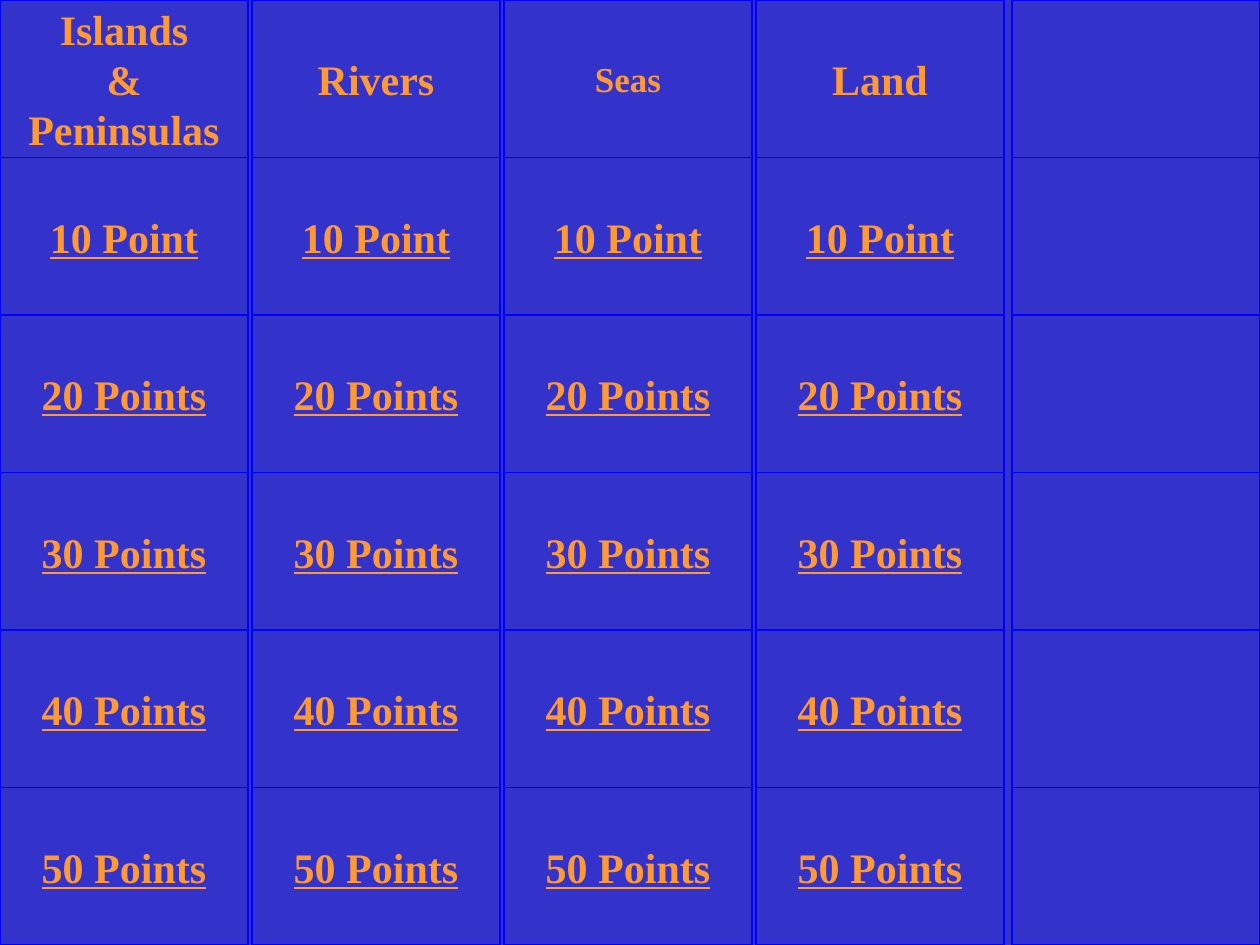
from dataclasses import dataclass

from pptx import Presentation
from pptx.dml.color import RGBColor
from pptx.enum.shapes import MSO_SHAPE as Preset
from pptx.enum.text import MSO_ANCHOR as Anchor, PP_ALIGN as Align
from pptx.slide import Slide
from pptx.util import Cm, Pt

SLIDE_WIDTH, SLIDE_HEIGHT = 25.4, 19.05
COLUMN_STEP, BUTTON_WIDTH = 5.08, 5.0
BLUE, OUTLINE, ORANGE = "3333CC", "0000FF", "FF9933"


@dataclass
class Category:
    title: str
    has_questions: bool = True
    title_size: int = 24


CATEGORIES = [
    Category("Islands\n&\nPeninsulas"),
    Category("Rivers"),
    Category("Seas", title_size=20),
    Category("Land"),
    Category("", has_questions=False),
]
POINTS = ["10 Point", "20 Points", "30 Points", "40 Points", "50 Points"]
ROW_HEIGHT = SLIDE_HEIGHT / (len(POINTS) + 1)


def color(value: str) -> RGBColor:
    return RGBColor.from_string(value)


def add_button(slide: Slide, left: float, row: int, text: str,
               size: int = 24, underline: bool = False) -> None:
    shape = slide.shapes.add_shape(
        Preset.ACTION_BUTTON_CUSTOM, Cm(left), Cm(row * ROW_HEIGHT),
        Cm(BUTTON_WIDTH), Cm(ROW_HEIGHT))
    shape.shadow.inherit = False
    shape.fill.solid()
    shape.fill.fore_color.rgb = color(BLUE)
    shape.line.color.rgb = color(OUTLINE)
    shape.line.width = Pt(0.75)
    if not text:
        return

    frame = shape.text_frame
    frame.text = text
    frame.word_wrap = False
    frame.vertical_anchor = Anchor.MIDDLE
    for paragraph in frame.paragraphs:
        paragraph.alignment = Align.CENTER
        font = paragraph.font
        font.name = "Times New Roman"
        font.size = Pt(size)
        font.bold = True
        font.underline = underline
        font.color.rgb = color(ORANGE)


def add_category(slide: Slide, left: float, category: Category) -> None:
    add_button(slide, left, 0, category.title, category.title_size)
    for row, points in enumerate(POINTS, start=1):
        text = points if category.has_questions else ""
        add_button(slide, left, row, text, underline=True)


def main() -> None:
    presentation = Presentation()
    presentation.slide_width = Cm(SLIDE_WIDTH)
    presentation.slide_height = Cm(SLIDE_HEIGHT)
    slide = presentation.slides.add_slide(presentation.slide_layouts[6])

    # Background
    slide.background.fill.solid()
    slide.background.fill.fore_color.rgb = color(BLUE)

    # Game board: the last column sits flush with the right edge
    *inner_categories, last_category = CATEGORIES
    for column, category in enumerate(inner_categories):
        add_category(slide, column * COLUMN_STEP, category)
    add_category(slide, SLIDE_WIDTH - BUTTON_WIDTH, last_category)

    presentation.save("out.pptx")


if __name__ == "__main__":
    main()
